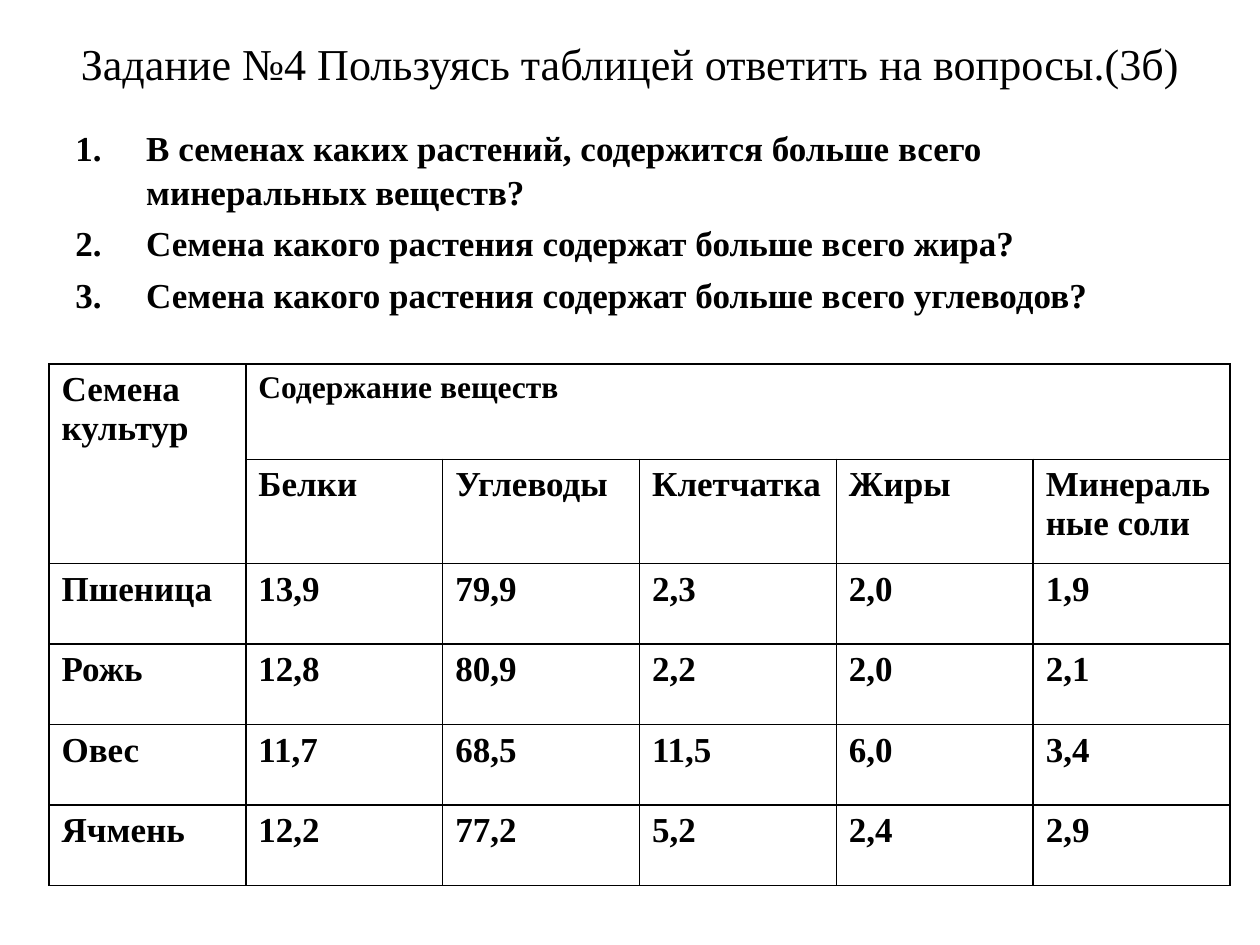
import pptx
import pptx.util
import pptx.dml.color
import pptx.enum.text
import pptx.oxml
import pptx.oxml.ns
import lxml.etree

Pt = pptx.util.Pt
qn = pptx.oxml.ns.qn
INK = "000000"


def color(code):
    return pptx.dml.color.RGBColor.from_string(code)


def write(para, text, size, bold=True):
    run = para.add_run()
    run.text = text
    style = {"name": "Times New Roman", "size": Pt(size), "bold": bold}
    for key, value in style.items():
        setattr(run.font, key, value)
    run.font.color.rgb = color(INK)


deck = pptx.Presentation()
deck.slide_width, deck.slide_height = Pt(720), Pt(540)
slide = deck.slides.add_slide(deck.slide_layouts[6])

# Title
title = slide.shapes.add_textbox(Pt(36), Pt(21.6), Pt(648), Pt(28.8)).text_frame
look = {"word_wrap": True, "margin_left": 0, "margin_right": 0,
        "vertical_anchor": pptx.enum.text.MSO_ANCHOR.MIDDLE}
for key, value in look.items():
    setattr(title, key, value)
head = title.paragraphs[0]
head.alignment = pptx.enum.text.PP_ALIGN.CENTER
write(head, "Задание №4 Пользуясь таблицей ответить на вопросы.(3б)", 25.2, False)

# Numbered questions
asks = ["В семенах каких растений, содержится больше всего минеральных веществ?",
        "Семена какого растения содержат больше всего жира?",
        "Семена какого растения содержат больше всего углеводов?"]
body = slide.shapes.add_textbox(Pt(36), Pt(67.7), Pt(648), Pt(414.7)).text_frame
body.word_wrap = True
for i, ask in enumerate(asks):
    para = body.paragraphs[0] if i == 0 else body.add_paragraph()
    for key, value in {"space_before": Pt(4), "line_spacing": 1.05}.items():
        setattr(para, key, value)
    write(para, ask, 20)
    props = para._p.get_or_add_pPr()
    props.set("marL", str(Pt(40.5)))
    props.set("indent", str(-Pt(40.5)))
    font = lxml.etree.SubElement(props, qn("a:buFont"))
    font.set("typeface", "Times New Roman")
    mark = lxml.etree.SubElement(props, qn("a:buAutoNum"))
    mark.set("type", "arabicPeriod")

# Table of seed contents
rows = [
    ["Семена культур", "Содержание веществ", "", "", "", ""],
    ["", "Белки", "Углеводы", "Клетчатка", "Жиры", "Минеральные соли"],
    ["Пшеница", "13,9", "79,9", "2,3", "2,0", "1,9"],
    ["Рожь", "12,8", "80,9", "2,2", "2,0", "2,1"],
    ["Овес", "11,7", "68,5", "11,5", "6,0", "3,4"],
    ["Ячмень", "12,2", "77,2", "5,2", "2,4", "2,9"],
]
tall = [54.5, 59.5] + [46] * 4
wide = 112.5
table = slide.shapes.add_table(len(rows), len(rows[0]), Pt(28), Pt(208),
                               Pt(wide * 6), Pt(sum(tall))).table
for key in ("first_row", "horz_banding"):
    setattr(table, key, False)
for col in table.columns:
    col.width = Pt(wide)
for row, high in zip(table.rows, tall):
    row.height = Pt(high)
table.cell(0, 0).merge(table.cell(1, 0))
table.cell(0, 1).merge(table.cell(0, 5))

for r, row in enumerate(rows):
    for c, text in enumerate(row):
        cell = table.cell(r, c)
        if text:
            write(cell.text_frame.paragraphs[0], text, 18 if (r, c) == (0, 1) else 20)
        # Borders come before the fill in the cell properties
        props = cell._tc.get_or_add_tcPr()
        for side in ("lnL", "lnR", "lnT", "lnB"):
            line = lxml.etree.SubElement(props, qn("a:" + side))
            line.set("w", str(Pt(1)))
            paint = lxml.etree.SubElement(line, qn("a:solidFill"))
            lxml.etree.SubElement(paint, qn("a:srgbClr")).set("val", INK)
        cell.fill.background()

deck.save("out.pptx")
